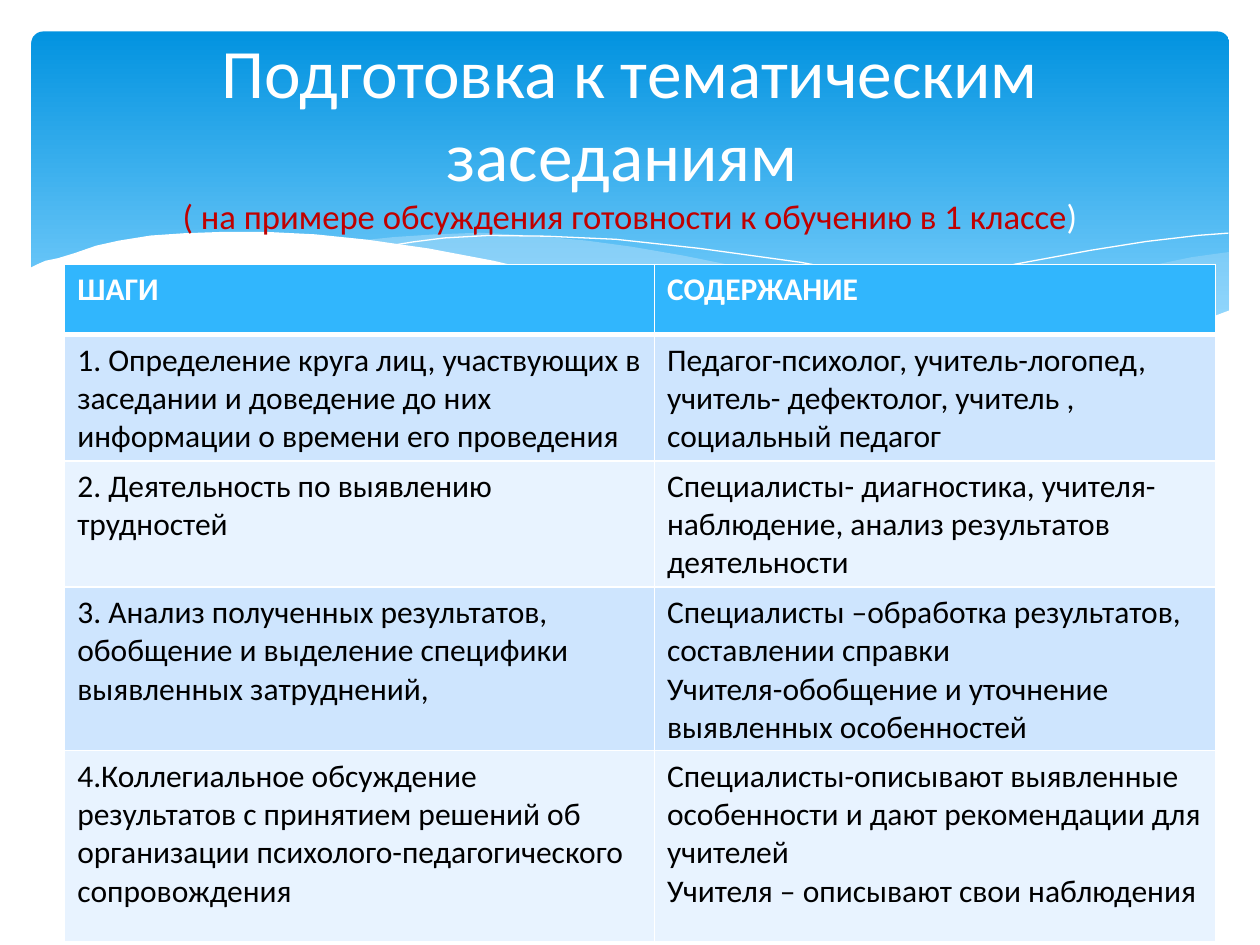
from dataclasses import dataclass
from typing import Optional

from lxml import etree
from pptx import Presentation
from pptx.dml.color import RGBColor
from pptx.enum.shapes import MSO_SHAPE
from pptx.enum.text import MSO_ANCHOR, PP_ALIGN
from pptx.oxml.ns import qn
from pptx.util import Pt

ROUNDED = MSO_SHAPE.ROUNDED_RECTANGLE
MIDDLE = MSO_ANCHOR.MIDDLE
CENTER = PP_ALIGN.CENTER
FONT = "Calibri"
COLORS = {
    "white": "FFFFFF", "black": "000000", "red": "C00000", "header": "31B6FD",
    "band_dark": "CEE5FE", "band_light": "E8F3FF", "mist": "C6E7FC",
    "sky_top": "0293E0", "sky_bottom": "83D3FE",
}


@dataclass
class Wave:
    """A curve given by points; filled waves are closed, the others are hairlines."""
    points: list[tuple[float, float]]
    fill: Optional[str] = None
    opacity: int = 100


@dataclass
class TitleRun:
    text: str
    size: float
    color: str


@dataclass
class Row:
    height: float
    cells: tuple[str, str]


WAVES = [
    Wave([(702.5, 144), (681, 147), (652, 153), (620, 160.5), (580, 170.5), (542, 178.5),
          (508, 185), (476, 191), (508, 195), (536, 198), (562, 199.4), (586, 200),
          (608, 199), (628, 197.5), (646, 194.5), (663, 191), (683, 185), (702.5, 178)],
         "mist", 29),
    Wave([(643, 196.5), (603, 191), (558, 183), (508, 173), (453, 160), (420, 152),
          (390, 146), (361, 141), (335, 137.5), (302, 134.5), (274, 133), (248, 134),
          (225, 135.5), (206, 137.5), (233, 141), (261, 146), (291, 152), (323, 160),
          (382, 173), (433, 184), (479, 191.5), (520, 197), (557, 199.5), (589, 200),
          (617, 199.5)], "mist", 40),
    Wave([(222.5, 140.5), (236, 138.3), (254, 136), (279, 134.6), (312, 135), (352, 136.8),
          (400, 142), (458, 150), (523, 162.5), (572, 173.5), (626, 188), (653, 196)]),
    Wave([(441.5, 185), (470, 177), (500, 169), (539, 160.5), (580, 151), (623.5, 143),
          (655, 138), (685, 134.5), (702, 133.2)]),
    Wave([(703.5, 177), (684, 184.3), (662, 190.8), (639, 195), (612, 198), (582.5, 199.4),
          (548, 198), (510, 194.5), (467, 188.6), (417, 180), (362, 168), (322, 158.4),
          (282, 149), (245, 142), (210, 137), (180, 133.9), (152, 132.5), (127.5, 132.5),
          (105, 133.3), (86, 134.6), (68, 137.5), (55, 140.4), (42.5, 144.7), (33, 147.6),
          (26, 149), (21, 151.2), (16.6, 153.4), (16.6, 237), (703.5, 237)], "white"),
]

TITLE_LINES = [
    [TitleRun("Подготовка к тематическим заседаниям ", 39.6, "white")],
    [TitleRun("( на примере обсуждения готовности к обучению в 1 классе", 19.8, "red"),
     TitleRun(")", 19.8, "white")],
]

COLUMN_WIDTHS = (337, 320.5)
ROWS = [
    Row(40.3, ("ШАГИ", "СОДЕРЖАНИЕ")),
    Row(68.4, ("1. Определение круга лиц, участвующих в заседании и доведение до них "
               "информации о времени его проведения",
               "Педагог-психолог, учитель-логопед, учитель- дефектолог, учитель , "
               "социальный педагог")),
    Row(68.4, ("2. Деятельность по выявлению трудностей",
               "Специалисты- диагностика, учителя- наблюдение, анализ результатов "
               "деятельности")),
    Row(89.3, ("3. Анализ полученных результатов, обобщение и выделение специфики "
               "выявленных затруднений,",
               "Специалисты –обработка результатов, составлении справки\n"
               "Учителя-обобщение и уточнение выявленных особенностей")),
    Row(109.4, ("4.Коллегиальное обсуждение результатов с принятием решений об организации "
                "психолого-педагогического сопровождения",
                "Специалисты-описывают выявленные особенности и дают рекомендации для "
                "учителей\nУчителя – описывают свои наблюдения")),
]


def rgb(name: str) -> RGBColor:
    return RGBColor.from_string(COLORS[name])


def style_run(r, size: float, color: str, bold: bool = False) -> None:
    r.font.name = FONT
    r.font.size = Pt(size)
    r.font.bold = bold
    r.font.color.rgb = rgb(color)


def draw_sky(s) -> None:
    sp = s.shapes.add_shape(ROUNDED, Pt(18), Pt(18), Pt(684.5), Pt(194.4))
    sp.adjustments[0] = 0.034
    sp.shadow.inherit = False
    sp.line.fill.background()
    sp.fill.gradient()
    sp.fill.gradient_angle = 270
    stops = zip(sp.fill.gradient_stops, ("sky_top", "sky_bottom"), (0, 0.9))
    for stop, color, position in stops:
        stop.color.rgb = rgb(color)
        stop.position = position


def draw_wave(s, wave: Wave) -> None:
    (x, y), *rest = [(Pt(px), Pt(py)) for px, py in wave.points]
    builder = s.shapes.build_freeform(x, y)
    builder.add_line_segments(rest, close=wave.fill is not None)
    sp = builder.convert_to_shape()
    sp.shadow.inherit = False
    if wave.fill is None:
        sp.fill.background()
        sp.line.color.rgb = rgb("white")
        sp.line.width = Pt(0)
        return
    sp.line.fill.background()
    sp.fill.solid()
    sp.fill.fore_color.rgb = rgb(wave.fill)
    if wave.opacity < 100:
        color = sp.fill._xPr.find(".//" + qn("a:srgbClr"))
        etree.SubElement(color, qn("a:alpha"), val=str(wave.opacity * 1000))


def draw_title(s) -> None:
    tf = s.shapes.add_textbox(Pt(36), Pt(26.6), Pt(648), Pt(98.6)).text_frame
    tf.word_wrap = True
    tf.vertical_anchor = MIDDLE
    p = tf.paragraphs[0]
    p.alignment = CENTER
    for i, line in enumerate(TITLE_LINES):
        if i:
            p.add_line_break()
        for part in line:
            r = p.add_run()
            r.text = part.text
            style_run(r, part.size, part.color)


def set_borders(cell, top: float, bottom: float) -> None:
    tc_pr = cell._tc.get_or_add_tcPr()
    for side, width in (("L", 1), ("R", 1), ("T", top), ("B", bottom)):
        ln = etree.SubElement(tc_pr, qn(f"a:ln{side}"), w=str(Pt(width)))
        fill = etree.SubElement(ln, qn("a:solidFill"))
        etree.SubElement(fill, qn("a:srgbClr"), val=COLORS["white"])


def draw_table(s) -> None:
    table = s.shapes.add_table(len(ROWS), len(COLUMN_WIDTHS), Pt(37), Pt(151),
                               Pt(sum(COLUMN_WIDTHS)),
                               Pt(sum(row.height for row in ROWS))).table
    for column, width in zip(table.columns, COLUMN_WIDTHS):
        column.width = Pt(width)
    for i, row in enumerate(ROWS):
        table.rows[i].height = Pt(row.height)
        is_header = i == 0
        band = "header" if is_header else "band_dark" if i % 2 else "band_light"
        for j, text in enumerate(row.cells):
            cell = table.cell(i, j)
            set_borders(cell, top=3 if i == 1 else 1, bottom=3 if is_header else 1)
            cell.fill.solid()
            cell.fill.fore_color.rgb = rgb(band)
            cell.text_frame.text = text
            for p in cell.text_frame.paragraphs:
                for r in p.runs:
                    style_run(r, 18, "white" if is_header else "black", is_header)


def main() -> None:
    prs = Presentation()
    prs.slide_width, prs.slide_height = Pt(720), Pt(540)
    s = prs.slides.add_slide(prs.slide_layouts[6])
    draw_sky(s)
    for wave in WAVES:
        draw_wave(s, wave)
    draw_title(s)
    draw_table(s)
    prs.save("out.pptx")


if __name__ == "__main__":
    main()
